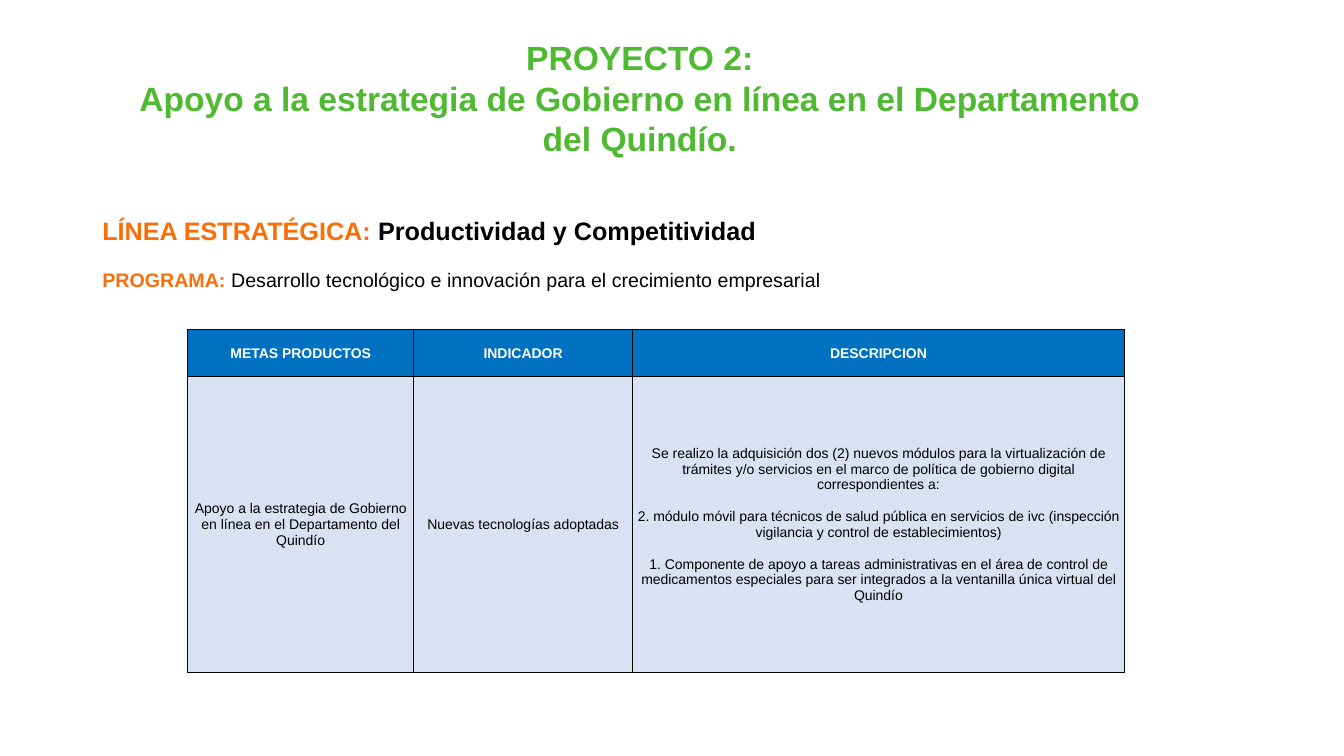
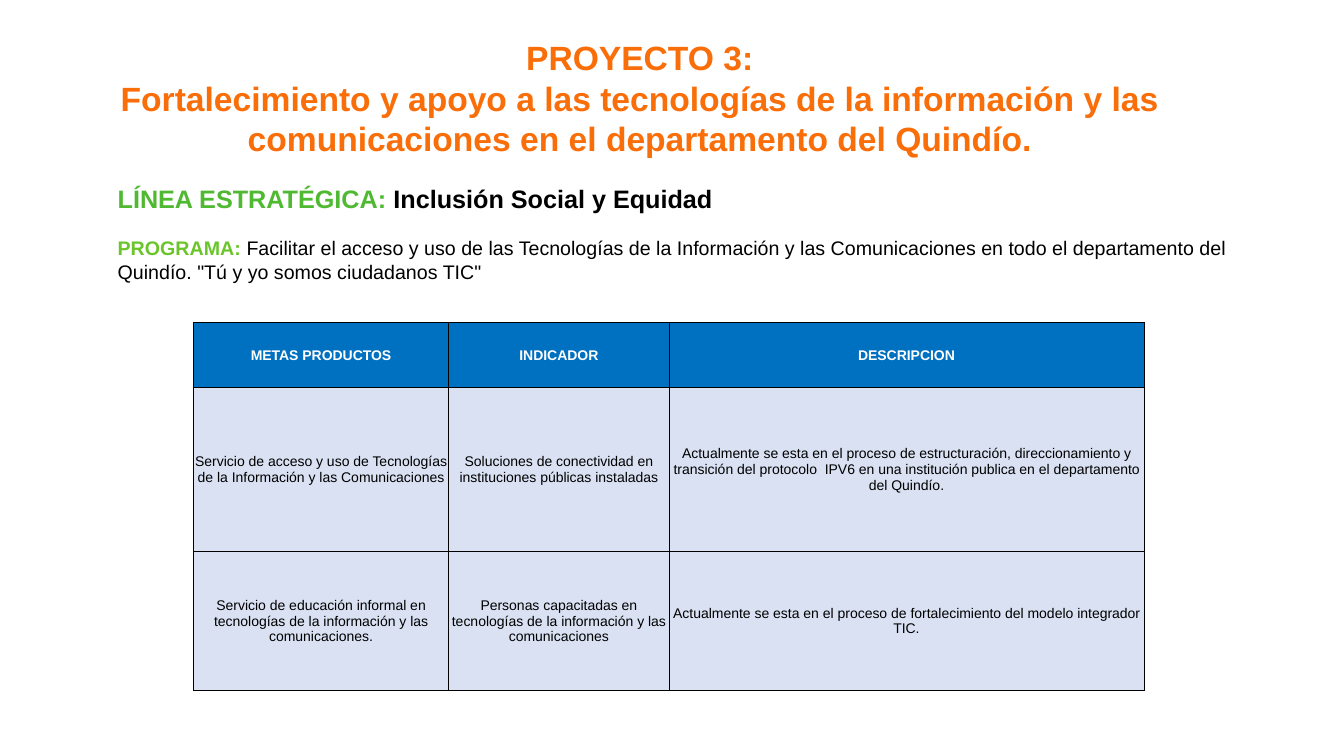
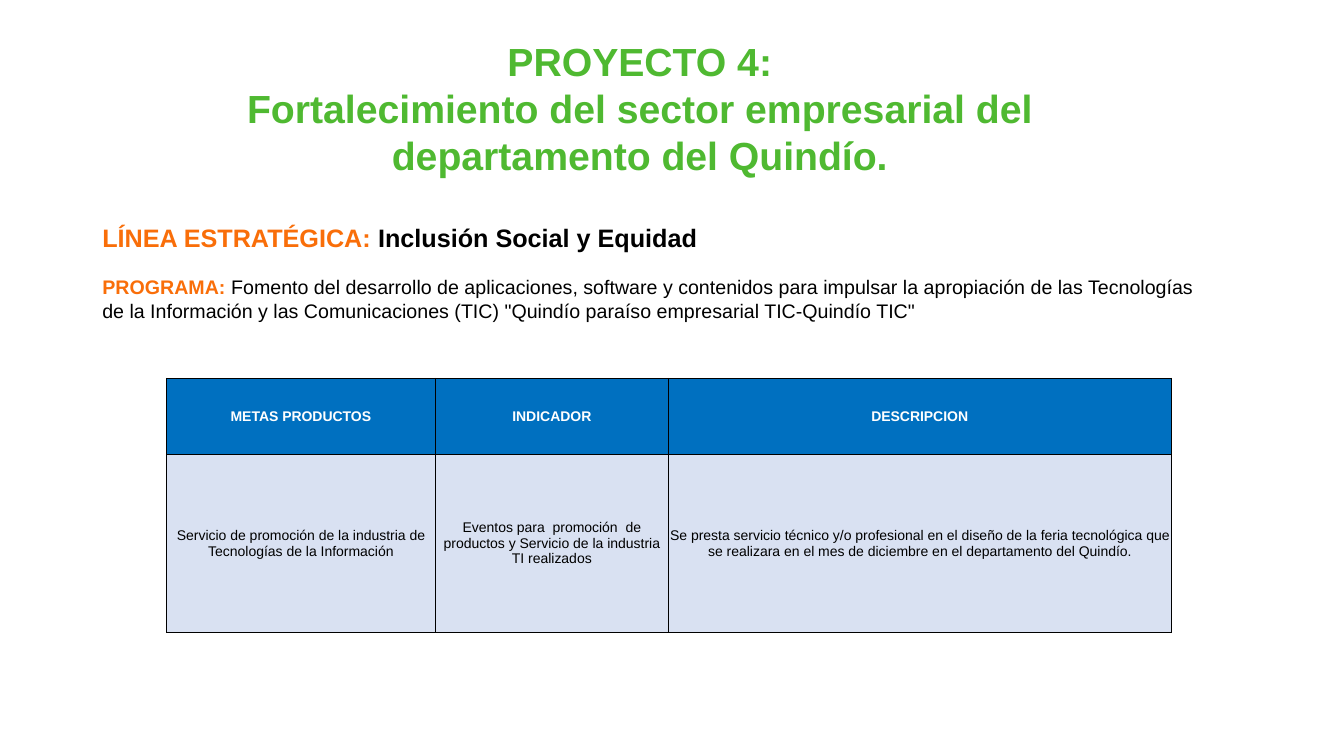
from collections import namedtuple

from lxml.etree import SubElement
from pptx import Presentation
from pptx.dml.color import RGBColor
from pptx.enum.text import MSO_ANCHOR, MSO_AUTO_SIZE, PP_ALIGN
from pptx.oxml.ns import qn
from pptx.util import Pt

Box = namedtuple("Box", "left top width height")

FONT = "Arial"
GREEN = "4FB931"
LIGHT_GREEN = "69C529"
ORANGE = "F96E09"
BLUE = "0070C0"
PALE_BLUE = "D9E1F2"
BLACK = "000000"
WHITE = "FFFFFF"
HEADINGS = ["METAS PRODUCTOS", "INDICADOR", "DESCRIPCION"]

PROJECTS = [
    dict(
        number=2,
        name="Apoyo a la estrategia de Gobierno en línea en el Departamento del Quindío.",
        title_box=Box(77, 23, 760, 94.5), title_size=24, title_color=GREEN,
        strategy="Productividad y Competitividad",
        program="Desarrollo tecnológico e innovación para el crecimiento empresarial",
        strategy_box=Box(66, 150.5, 812, 63.5), label_colors=(ORANGE, ORANGE),
        goals_origin=(134, 235.5), columns=(161.5, 156.3, 351.4), rows=(33.5, 211),
        goals=[[
            "Apoyo a la estrategia de Gobierno en línea en el Departamento del Quindío",
            "Nuevas tecnologías adoptadas",
            "Se realizo la adquisición dos (2) nuevos módulos para la virtualización de trámites "
            "y/o servicios en el marco de política de gobierno digital correspondientes a:\n"
            "2. módulo móvil para técnicos de salud pública en servicios de ivc (inspección "
            "vigilancia y control de establecimientos)\n"
            "1. Componente de apoyo a tareas administrativas en el área de control de "
            "medicamentos especiales para ser integrados a la ventanilla única virtual del Quindío",
        ]],
    ),
    dict(
        number=3,
        name="Fortalecimiento y apoyo a las tecnologías de la información y las "
             "comunicaciones en el departamento del Quindío.",
        title_box=Box(77, 23, 760, 94.5), title_size=24, title_color=ORANGE,
        strategy="Inclusión Social y Equidad",
        program="Facilitar el acceso y uso de las Tecnologías de la Información y las "
                "Comunicaciones en todo el departamento del Quindío. "
                '"Tú y yo somos ciudadanos TIC"',
        strategy_box=Box(77, 127.5, 812, 80), label_colors=(GREEN, LIGHT_GREEN),
        goals_origin=(138.2, 230.4), columns=(182.2, 157.6, 339.1), rows=(46, 117.4, 99.4),
        goals=[
            [
                "Servicio de acceso y uso de Tecnologías de la Información y las Comunicaciones",
                "Soluciones de conectividad en instituciones públicas instaladas",
                "Actualmente se esta en el proceso de estructuración, direccionamiento y "
                "transición del protocolo  IPV6 en una institución publica en el "
                "departamento del Quindío.",
            ],
            [
                "Servicio de educación informal en tecnologías de la información y las "
                "comunicaciones.",
                "Personas capacitadas en tecnologías de la información y las comunicaciones",
                "Actualmente se esta en el proceso de fortalecimiento del modelo integrador TIC.",
            ],
        ],
    ),
    dict(
        number=4,
        name="Fortalecimiento del sector empresarial del departamento del Quindío.",
        title_box=Box(77, 23, 760, 109), title_size=28, title_color=GREEN,
        strategy="Inclusión Social y Equidad",
        program="Fomento del desarrollo de aplicaciones, software y contenidos para impulsar "
                "la apropiación de las Tecnologías de la Información y las Comunicaciones "
                '(TIC) "Quindío paraíso empresarial TIC-Quindío TIC"',
        strategy_box=Box(66, 155.5, 812, 80), label_colors=(ORANGE, ORANGE),
        goals_origin=(118.8, 270.2), columns=(192.2, 166.3, 359.3), rows=(54, 127.4),
        goals=[[
            "Servicio de promoción de la industria de Tecnologías de la Información",
            "Eventos para  promoción  de productos y Servicio de la industria TI realizados",
            "Se presta servicio técnico y/o profesional en el diseño de la feria tecnológica "
            "que se realizara en el mes de diciembre en el departamento del Quindío.",
        ]],
    ),
]


def rgb(color):
    return RGBColor.from_string(color)


def add_run(paragraph, text, size, color, bold=False):
    run = paragraph.add_run()
    run.text = text
    run.font.name = FONT
    run.font.size = Pt(size)
    run.font.bold = bold
    run.font.color.rgb = rgb(color)


def next_paragraph(frame, index, gap=0):
    if index == 0:
        return frame.paragraphs[0]
    paragraph = frame.add_paragraph()
    paragraph.space_before = Pt(gap)
    return paragraph


def place_title(slide, box, lines, size, color):
    title = slide.shapes.title
    title.left, title.top, title.width, title.height = map(Pt, box)
    frame = title.text_frame
    frame.word_wrap = True
    frame.auto_size = MSO_AUTO_SIZE.NONE
    frame.vertical_anchor = MSO_ANCHOR.TOP
    for index, line in enumerate(lines):
        paragraph = next_paragraph(frame, index)
        paragraph.alignment = PP_ALIGN.CENTER
        add_run(paragraph, line, size, color, True)


def place_strategy(slide, box, strategy, program, label_colors):
    frame = slide.shapes.add_textbox(*map(Pt, box)).text_frame
    frame.word_wrap = True
    entries = [("LÍNEA ESTRATÉGICA: ", strategy, 18, True),
               ("PROGRAMA: ", program, 14, False)]
    for index, (label, text, size, bold) in enumerate(entries):
        paragraph = next_paragraph(frame, index, 16)
        add_run(paragraph, label, size, label_colors[index], True)
        add_run(paragraph, text, size, BLACK, bold)


def draw_borders(cell):
    properties = cell._tc.get_or_add_tcPr()
    for side in ("a:lnL", "a:lnR", "a:lnT", "a:lnB"):
        line = SubElement(properties, qn(side), w=str(Pt(0.5)))
        fill = SubElement(line, qn("a:solidFill"))
        SubElement(fill, qn("a:srgbClr"), val=BLACK)


def fill_cell(cell, text, background, color, bold):
    draw_borders(cell)
    cell.fill.solid()
    cell.fill.fore_color.rgb = rgb(background)
    cell.vertical_anchor = MSO_ANCHOR.MIDDLE
    cell.margin_left = cell.margin_right = cell.margin_top = Pt(0.7)
    cell.margin_bottom = Pt(0)
    for index, line in enumerate(text.split("\n")):
        paragraph = next_paragraph(cell.text_frame, index, 11.5)
        paragraph.alignment = PP_ALIGN.CENTER
        add_run(paragraph, line, 10, color, bold)


def place_goals(slide, box, columns, rows, goals):
    table = slide.shapes.add_table(len(rows), len(columns), *map(Pt, box)).table
    table.horz_banding = False
    for column, width in zip(table.columns, columns):
        column.width = Pt(width)
    for row, height in zip(table.rows, rows):
        row.height = Pt(height)
    for row_index, texts in enumerate([HEADINGS, *goals]):
        style = (PALE_BLUE, BLACK, False) if row_index else (BLUE, WHITE, True)
        for column_index, text in enumerate(texts):
            fill_cell(table.cell(row_index, column_index), text, *style)


def add_project(deck, project):
    slide = deck.slides.add_slide(deck.slide_layouts[5])
    place_title(slide, project["title_box"],
                [f"PROYECTO {project['number']}:", project["name"]],
                project["title_size"], project["title_color"])
    columns, rows = project["columns"], project["rows"]
    goals_box = Box(*project["goals_origin"], sum(columns), sum(rows))
    place_goals(slide, goals_box, columns, rows, project["goals"])
    place_strategy(slide, project["strategy_box"], project["strategy"],
                   project["program"], project["label_colors"])


def main():
    deck = Presentation()
    deck.slide_width, deck.slide_height = Pt(960), Pt(540)
    for project in PROJECTS:
        add_project(deck, project)
    deck.save("out.pptx")


if __name__ == "__main__":
    main()
